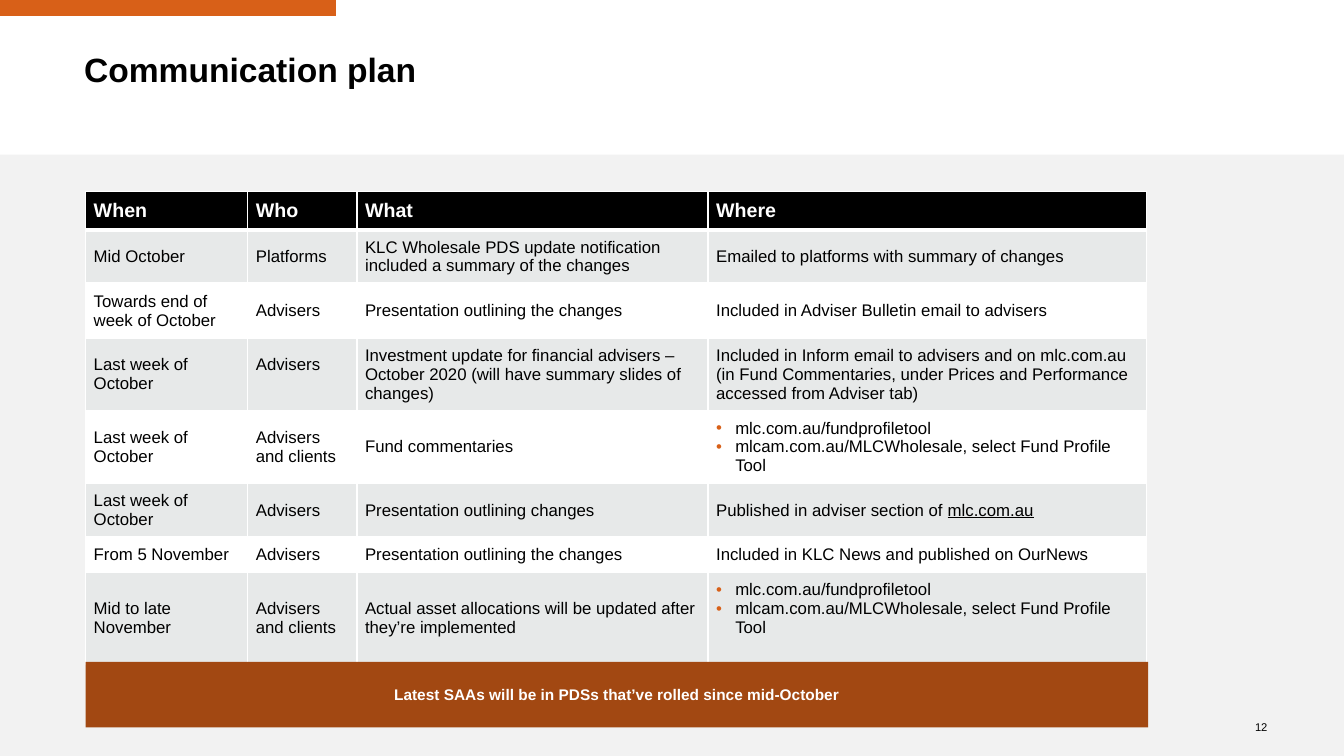
from pptx import Presentation, util as u
from pptx.dml.color import RGBColor
from pptx.enum import shapes, text
from pptx.oxml import parse_xml
from pptx.oxml.ns import nsdecls

COLOURS = {
    "black": "000000", "white": "FFFFFF", "panel": "F2F2F2",
    "band": "E7E9E9", "orange": "D86018", "rust": "A24812",
}
FONT = "Arial"
UNIT = u.Inches(13.333) / 160  # the slide is a grid of 160 columns by 90 rows
CELL_MARGIN = u.Inches(0.08)
LINE = u.Inches(0.19)

COLUMN_SPANS = [19.3, 13, 41.8, 52.2]
ROW_SPANS = [4.5, 6.3, 6.5, 8.65, 8.65, 6.3, 4.2, 10.9]
HEADINGS = ["When", "Who", "What", "Where"]
FUND_PAGES = ["mlc.com.au/fundprofiletool",
              "mlcam.com.au/MLCWholesale, select Fund Profile Tool"]
PLAN = [
    ["Mid October", "Platforms",
     "KLC Wholesale PDS update notification included a summary of the changes",
     "Emailed to platforms with summary of changes"],
    ["Towards end of week of October", "Advisers",
     "Presentation outlining the changes",
     "Included in Adviser Bulletin email to advisers"],
    ["Last week of October", "Advisers",
     "Investment update for financial advisers – October 2020 "
     "(will have summary slides of changes)",
     "Included in Inform email to advisers and on mlc.com.au (in Fund Commentaries, "
     "under Prices and Performance accessed from Adviser tab)"],
    ["Last week of October", "Advisers and clients", "Fund commentaries", FUND_PAGES],
    ["Last week of October", "Advisers", "Presentation outlining changes",
     ("Published in adviser section of ", "mlc.com.au")],
    ["From 5 November", "Advisers", "Presentation outlining the changes",
     "Included in KLC News and published on OurNews"],
    ["Mid to late November", "Advisers and clients",
     "Actual asset allocations will be updated after they’re implemented", FUND_PAGES],
]
RAISED_CELLS = [(3, 1), (7, 3)]  # text sits half a line above the middle


def rgb(name):
    return RGBColor.from_string(COLOURS[name])


def grid(*spans):
    return [u.Emu(round(span * UNIT)) for span in spans]


def set_font(para, size, colour="black", bold=False):
    font = para.font
    font.name, font.size, font.bold = FONT, u.Pt(size), bold
    font.color.rgb = rgb(colour)


def set_frame(frame, anchor, wrap):
    frame.margin_left = frame.margin_right = frame.margin_top = frame.margin_bottom = 0
    frame.vertical_anchor = anchor
    frame.word_wrap = wrap
    frame.auto_size = text.MSO_AUTO_SIZE.NONE


def add_block(page, place, colour):
    block = page.shapes.add_shape(shapes.MSO_SHAPE.RECTANGLE, *grid(*place))
    block.shadow.inherit = False
    block.fill.solid()
    block.fill.fore_color.rgb = rgb(colour)
    block.line.fill.background()
    return block


def add_title(page, wording):
    title = page.shapes.title
    title.left, title.top, title.width, title.height = grid(10, 6.4, 127.6, 6.8)
    set_frame(title.text_frame, text.MSO_ANCHOR.TOP, True)
    title.text_frame.text = wording
    para = title.text_frame.paragraphs[0]
    para.alignment = text.PP_ALIGN.LEFT
    para.line_spacing = 0.9
    set_font(para, 24, bold=True)


def add_page_number(page, number):
    box = page.shapes.add_textbox(*grid(147.5, 85.3, 3.4, 2.5))
    set_frame(box.text_frame, text.MSO_ANCHOR.MIDDLE, False)
    para = box.text_frame.paragraphs[0]
    para.text = number
    para.alignment = text.PP_ALIGN.RIGHT
    set_font(para, 8)


def add_banner(page, wording):
    banner = add_block(page, (10.2, 78.8, 126.5, 7.8), "rust")
    set_frame(banner.text_frame, text.MSO_ANCHOR.MIDDLE, False)
    para = banner.text_frame.paragraphs[0]
    para.text = wording
    para.alignment = text.PP_ALIGN.CENTER
    set_font(para, 11, "white", True)


def add_bullet(para):
    props = para._p.get_or_add_pPr()
    indent = u.Inches(0.19)
    props.set("marL", str(indent))
    props.set("indent", str(-indent))
    props.append(parse_xml(f'<a:buClr {nsdecls("a")}><a:srgbClr val="{COLOURS["orange"]}"/></a:buClr>'))
    props.append(parse_xml(f'<a:buFont {nsdecls("a")} typeface="{FONT}"/>'))
    props.append(parse_xml(f'<a:buChar {nsdecls("a")} char="•"/>'))


def set_borders(cell, top, bottom):
    """Draw white cell edges; top and bottom are widths in points."""
    props = cell._tc.get_or_add_tcPr()
    for index, (side, width) in enumerate(zip("LRTB", (1, 1, top, bottom))):
        props.insert(index, parse_xml(
            f'<a:ln{side} {nsdecls("a")} w="{u.Pt(width)}"><a:solidFill>'
            f'<a:srgbClr val="{COLOURS["white"]}"/></a:solidFill></a:ln{side}>'))


def fill_cell(cell, content, size, colour, bold):
    """Write a string, a list of bullets, or a (plain, underlined) pair."""
    frame = cell.text_frame
    bulleted = isinstance(content, list)
    for index, item in enumerate(content if bulleted else [content]):
        para = frame.add_paragraph() if index else frame.paragraphs[0]
        if bulleted:
            add_bullet(para)
        if isinstance(item, tuple):
            for wording in item:
                span = para.add_run()
                span.text = wording
            span.font.underline = True
        else:
            para.text = item
        set_font(para, size, colour, bold)


def add_plan_table(page):
    rows = [HEADINGS] + PLAN
    place = grid(10.2, 22.8, sum(COLUMN_SPANS), sum(ROW_SPANS))
    table = page.shapes.add_table(len(rows), len(HEADINGS), *place).table
    for column, width in zip(table.columns, grid(*COLUMN_SPANS)):
        column.width = width
    for row, height in zip(table.rows, grid(*ROW_SPANS)):
        row.height = height
    for r, contents in enumerate(rows):
        header = r == 0
        fill = "black" if header else "band" if r % 2 else "white"
        style = (14, "white", True) if header else (12, "black", False)
        for c, content in enumerate(contents):
            cell = table.cell(r, c)
            cell.vertical_anchor = text.MSO_ANCHOR.MIDDLE
            cell.margin_left = cell.margin_right = CELL_MARGIN
            cell.margin_top = cell.margin_bottom = CELL_MARGIN
            if (r, c) in RAISED_CELLS:
                cell.margin_bottom = CELL_MARGIN + LINE
            cell.fill.solid()
            cell.fill.fore_color.rgb = rgb(fill)
            set_borders(cell, 3 if r in (1, 2) else 1, 3 if r in (0, 1) else 1)
            fill_cell(cell, content, *style)


def main():
    deck = Presentation()
    deck.slide_width, deck.slide_height = grid(160, 90)
    page = deck.slides.add_slide(deck.slide_layouts[5])
    add_block(page, (0, 0, 40, 1.9), "orange")
    add_block(page, (0, 18.4, 160, 71.6), "panel")
    add_page_number(page, "12")
    add_title(page, "Communication plan")
    add_plan_table(page)
    add_banner(page, "Latest SAAs will be in PDSs that’ve rolled since mid-October")
    deck.save("out.pptx")


if __name__ == "__main__":
    main()
